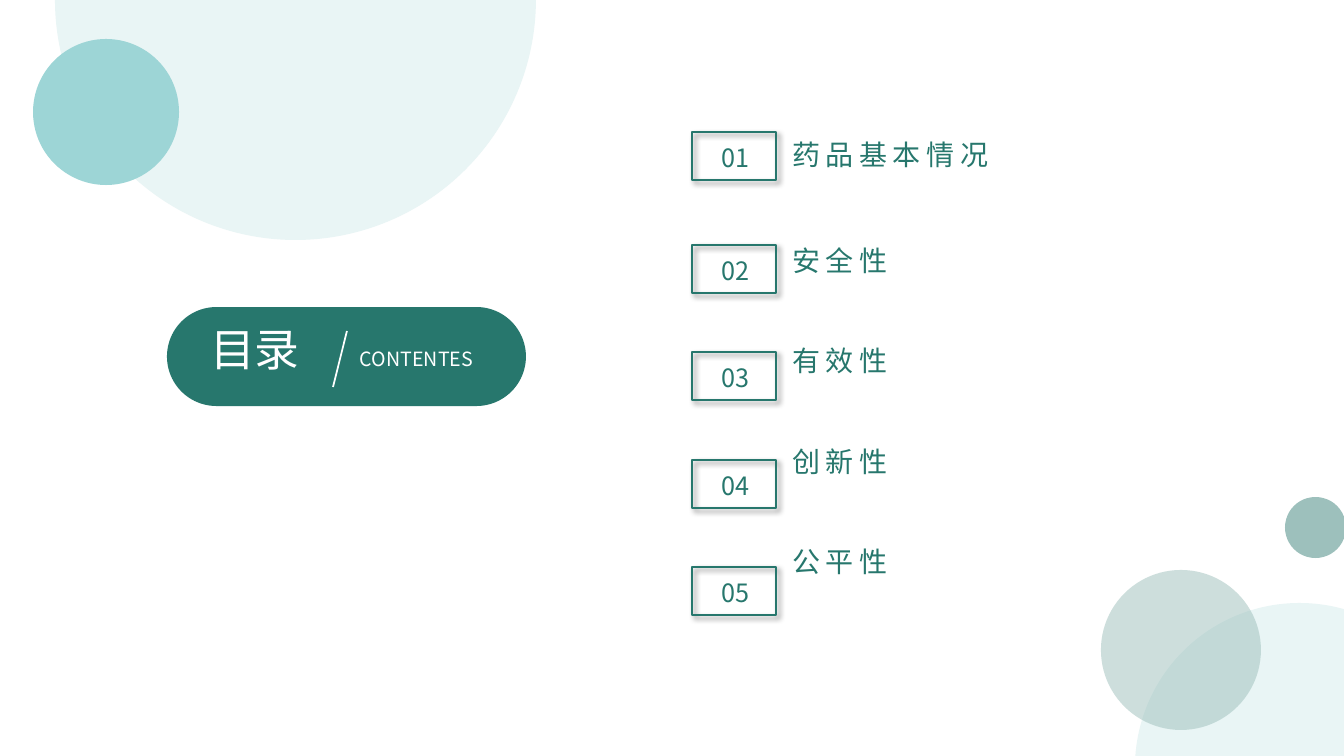
from dataclasses import dataclass
from typing import Optional

from lxml.etree import SubElement
from pptx import Presentation
from pptx.dml.color import RGBColor
from pptx.enum.shapes import MSO_CONNECTOR, MSO_SHAPE
from pptx.enum.text import MSO_ANCHOR, MSO_AUTO_SIZE, PP_ALIGN
from pptx.oxml.ns import qn
from pptx.util import Emu, Pt

PX = 12192000 / 1344
FONT = "Noto Sans CJK SC"
GREEN = "27776D"
MINT = "E9F5F5"
SAGE = "9DC0BC"
WHITE = "FFFFFF"
LINE_HEIGHT_PT = 28.96


@dataclass(frozen=True)
class Box:
    left: int
    top: int
    width: int
    height: int


@dataclass(frozen=True)
class Circle:
    left: int
    top: int
    diameter: int
    fill: str
    alpha: Optional[int] = None


@dataclass(frozen=True)
class Chapter:
    top: int
    label: str


UPPER_CIRCLES = [Circle(55, -241, 481, MINT), Circle(33, 39, 146, "9DD5D6")]
LOWER_CIRCLES = [
    Circle(1135, 603, 329, MINT),
    Circle(1285, 497, 61, SAGE),
    Circle(1101, 570, 160, SAGE, 51),
]
CHAPTERS = [
    Chapter(132, "药品基本情况"),
    Chapter(245, "安全性"),
    Chapter(352, "有效性"),
    Chapter(460, "创新性"),
    Chapter(567, "公平性"),
]


def px(length: int) -> Emu:
    return Emu(round(length * PX))


def colour(value: str) -> RGBColor:
    return RGBColor.from_string(value)


def place(shape, box: Box) -> None:
    shape.left, shape.top = px(box.left), px(box.top)
    shape.width, shape.height = px(box.width), px(box.height)


def add_plain_shape(slide, kind, box: Box):
    shape = slide.shapes.add_shape(
        kind, px(box.left), px(box.top), px(box.width), px(box.height))
    shape.shadow.inherit = False
    return shape


def fill_solid(shape, value: str) -> None:
    shape.fill.solid()
    shape.fill.fore_color.rgb = colour(value)
    shape.line.fill.background()


def add_circle(slide, circle: Circle) -> None:
    disc = add_plain_shape(
        slide, MSO_SHAPE.OVAL,
        Box(circle.left, circle.top, circle.diameter, circle.diameter))
    fill_solid(disc, circle.fill)
    if circle.alpha is not None:
        tint = disc.element.spPr.find(f"{qn('a:solidFill')}/{qn('a:srgbClr')}")
        SubElement(tint, qn("a:alpha"), val=str(circle.alpha * 1000))


def add_run(paragraph, text: str, size: int, value: str, spacing: int = 0) -> None:
    run = paragraph.add_run()
    run.text = text
    run.font.size = Pt(size)
    run.font.name = FONT
    run.font.color.rgb = colour(value)
    properties = run.font._element
    SubElement(properties, qn("a:ea"), typeface=FONT)
    if spacing:
        properties.set("spc", str(spacing * 100))


def prepare_frame(shape):
    frame = shape.text_frame
    frame.word_wrap = True
    frame.auto_size = MSO_AUTO_SIZE.NONE
    frame.vertical_anchor = MSO_ANCHOR.TOP
    return frame


def add_text(slide, box: Box, text: str, size: int, value: str, align) -> None:
    caption = slide.shapes.add_textbox(
        px(box.left), px(box.top), px(box.width), px(box.height))
    paragraph = prepare_frame(caption).paragraphs[0]
    paragraph.alignment = align
    add_run(paragraph, text, size, value)


def add_heading(slide) -> None:
    pill = add_plain_shape(
        slide, MSO_SHAPE.ROUNDED_RECTANGLE, Box(167, 307, 359, 99))
    pill.adjustments[0] = 0.5
    fill_solid(pill, GREEN)

    title = slide.shapes.title
    place(title, Box(200, 317, 133, 67))
    pill.element.addnext(title.element)
    paragraph = prepare_frame(title).paragraphs[0]
    paragraph.alignment = PP_ALIGN.LEFT
    add_run(paragraph, "目录", 32, WHITE)

    slash = slide.shapes.add_connector(
        MSO_CONNECTOR.STRAIGHT, px(333), px(387), px(347), px(331))
    slash.line.color.rgb = colour(WHITE)
    slash.line.width = Pt(1.25)
    SubElement(slash.element.spPr, qn("a:effectLst"))
    add_text(slide, Box(350, 342, 176, 35), "CONTENTES", 14, WHITE, PP_ALIGN.LEFT)


def add_number(slide, number: int, top: int) -> None:
    frame = add_plain_shape(slide, MSO_SHAPE.RECTANGLE, Box(692, top, 84, 48))
    frame.fill.background()
    frame.line.color.rgb = colour(GREEN)
    frame.line.width = Pt(1.75)
    effects = frame.element.spPr.find(qn("a:effectLst"))
    shadow = SubElement(
        effects, qn("a:outerShdw"), blurRad=str(Pt(4)), dist=str(Pt(3)),
        dir="2700000", algn="tl", rotWithShape="0")
    tint = SubElement(shadow, qn("a:srgbClr"), val="000000")
    SubElement(tint, qn("a:alpha"), val="40000")
    add_text(slide, Box(697, top + 5, 78, 40), f"{number:02d}", 18, GREEN,
             PP_ALIGN.CENTER)


def add_chapters(slide) -> None:
    first, last = CHAPTERS[0], CHAPTERS[-1]
    agenda = slide.placeholders[1]
    place(agenda, Box(782, first.top, 381, last.top - first.top + 44))
    frame = prepare_frame(agenda)
    previous = first
    for number, chapter in enumerate(CHAPTERS, 1):
        add_number(slide, number, chapter.top)
        paragraph = frame.paragraphs[0] if chapter is first else frame.add_paragraph()
        properties = paragraph._p.get_or_add_pPr()
        properties.set("marL", "0")
        properties.set("indent", "0")
        SubElement(properties, qn("a:buNone"))
        paragraph.line_spacing = 1.0
        gap = px(chapter.top - previous.top).pt - LINE_HEIGHT_PT
        paragraph.space_before = Pt(max(0, gap))
        paragraph.space_after = Pt(0)
        add_run(paragraph, chapter.label, 20, GREEN, 4)
        previous = chapter


def main() -> None:
    deck = Presentation()
    deck.slide_width, deck.slide_height = px(1344), px(756)
    slide = deck.slides.add_slide(deck.slide_layouts[1])
    for circle in UPPER_CIRCLES:
        add_circle(slide, circle)
    add_heading(slide)
    for circle in LOWER_CIRCLES:
        add_circle(slide, circle)
    add_chapters(slide)
    deck.save("out.pptx")


if __name__ == "__main__":
    main()
